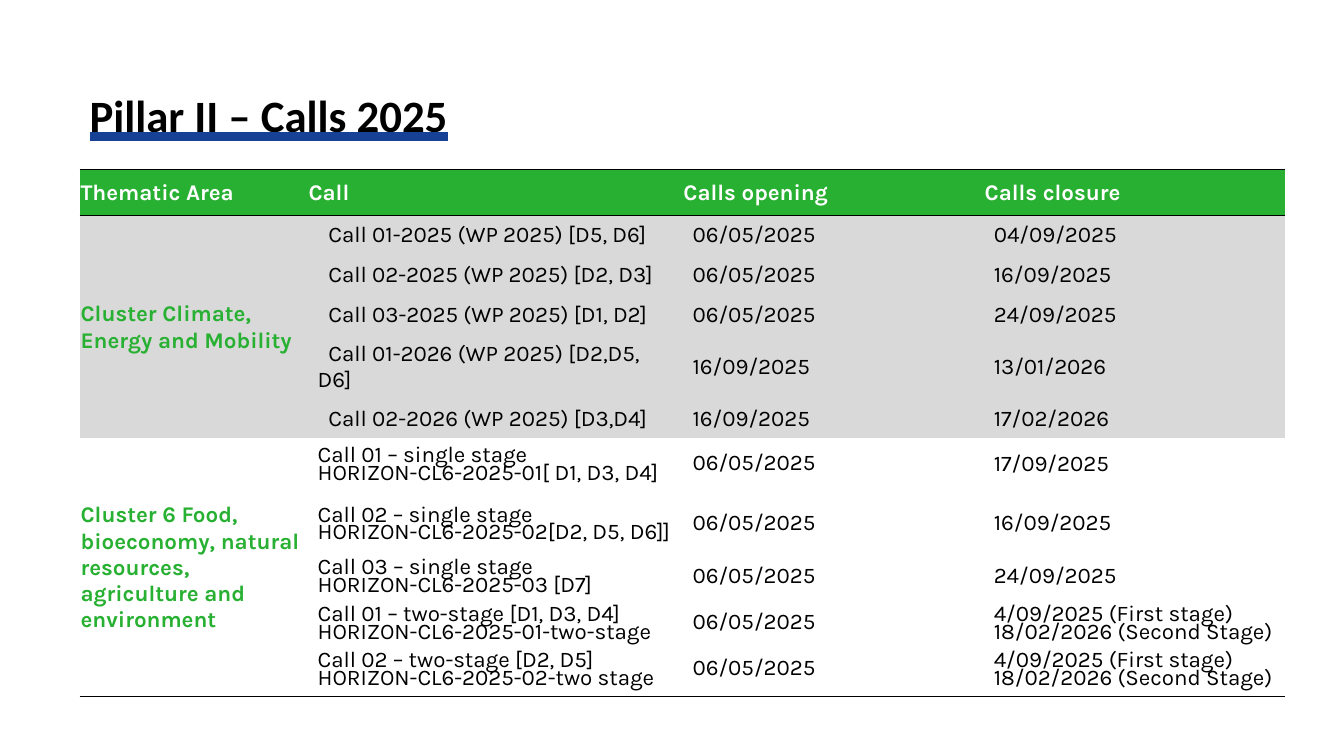
from dataclasses import dataclass

from lxml.etree import SubElement as Sub
from pptx import Presentation
from pptx.dml.color import RGBColor as Rgb
from pptx.enum.text import MSO_ANCHOR as Anchor, MSO_UNDERLINE as Under
from pptx.oxml.ns import qn
from pptx.util import Pt

BLACK, WHITE, GREEN, GREY, BLUE = "000000", "FFFFFF", "28B032", "D9D9D9", "164194"
HEADS = ["Thematic Area", "Call", "Calls opening", "Calls closure"]
COLS = [162.8, 267.8, 215.2, 215.2]
ROWS = [33.1] + [28.4] * 5 + [42.5] * 2 + [33.1] * 3
STAGES = "4/09/2025 (First stage)\n18/02/2026 (Second Stage)"


@dataclass
class Call:
    name: str
    start: str
    end: str


@dataclass
class Area:
    name: str
    fill: str
    indent: float
    leads: tuple  # line pitch of the call, opening and closure columns
    calls: list


AREAS = [
    Area("Cluster Climate, Energy and Mobility", GREY, 7.7, (None, None, None), [
        Call("Call 01-2025 (WP 2025) [D5, D6]", "06/05/2025", "04/09/2025"),
        Call("Call 02-2025 (WP 2025) [D2, D3]", "06/05/2025", "16/09/2025"),
        Call("Call 03-2025 (WP 2025) [D1, D2]", "06/05/2025", "24/09/2025"),
        Call("Call 01-2026 (WP 2025) [D2,D5, D6]", "16/09/2025", "13/01/2026"),
        Call("Call 02-2026 (WP 2025) [D3,D4]", "16/09/2025", "17/02/2026"),
    ]),
    Area("Cluster 6 Food, bioeconomy, natural resources, agriculture and environment",
         WHITE, 0, (12.8, 12, 12.8), [
        Call("Call 01 – single stage\nHORIZON-CL6-2025-01[ D1, D3, D4]", "06/05/2025", "17/09/2025"),
        Call("Call 02 – single stage\nHORIZON-CL6-2025-02[D2, D5, D6]]", "06/05/2025", "16/09/2025"),
        Call("Call 03 – single stage\nHORIZON-CL6-2025-03 [D7]", "06/05/2025", "24/09/2025"),
        Call("Call 01 – two-stage [D1, D3, D4]\nHORIZON-CL6-2025-01-two-stage", "06/05/2025", STAGES),
        Call("Call 02 – two-stage [D2, D5]\nHORIZON-CL6-2025-02-two stage", "06/05/2025", STAGES),
    ]),
]


def rgb(code: str) -> Rgb:
    return Rgb.from_string(code)


def style(para, face: str, size: float, color: str, bold: bool) -> None:
    font = para.font
    font.name, font.size, font.bold = face, Pt(size), bold
    font.color.rgb = rgb(color)


def edge(cell, lines: str) -> None:
    """Rule the named sides (T, B) and clear the others."""
    props = cell._tc.get_or_add_tcPr()
    for side in "LRTB":
        line = Sub(props, qn(f"a:ln{side}"), w=str(Pt(1)))
        if side in lines:
            Sub(Sub(line, qn("a:solidFill")), qn("a:srgbClr"), val=BLACK)
        else:
            Sub(line, qn("a:noFill"))


def fill(cell, text: str, back: str, color: str, bold: bool,
         lead: float | None = None, indent: float = 0) -> None:
    cell.fill.solid()
    cell.fill.fore_color.rgb = rgb(back)
    cell.vertical_anchor = Anchor.MIDDLE
    if bold:
        cell.margin_left = cell.margin_right = cell.margin_top = Pt(0.7)
        cell.margin_bottom = Pt(0)
    cell.text_frame.text = text
    for para in cell.text_frame.paragraphs:
        if lead:
            para.line_spacing = Pt(lead)
        if indent:
            para._p.get_or_add_pPr().set("indent", str(Pt(indent)))
        style(para, "Karla", 16, color, bold)


def title(slide) -> None:
    frame = slide.shapes.add_textbox(Pt(56.9), Pt(47.5), Pt(828), Pt(73.4)).text_frame
    frame.word_wrap = True
    frame.vertical_anchor = Anchor.MIDDLE
    para = frame.paragraphs[0]
    para.line_spacing = 0.9
    run = para.add_run()
    run.text = "Pillar II – Calls 2025"
    style(run, "Calibri", 32, BLACK, True)
    run.font.underline = Under.HEAVY_LINE
    # Blue underline, placed ahead of the typeface
    paint = Sub(run.font._element, qn("a:uFill"))
    Sub(Sub(paint, qn("a:solidFill")), qn("a:srgbClr"), val=BLUE)
    run.font._element.find(qn("a:latin")).addprevious(paint)


def grid(slide) -> None:
    frame = slide.shapes.add_table(len(ROWS), len(COLS), Pt(56.9), Pt(121),
                                   Pt(sum(COLS)), Pt(sum(ROWS)))
    table = frame.table
    for col, width in zip(table.columns, COLS):
        col.width = Pt(width)
    for row, height in zip(table.rows, ROWS):
        row.height = Pt(height)

    # Rules above and below the header, and under the last row
    rules = {0: "TB", 1: "T", len(ROWS) - 1: "B"}
    for y in range(len(ROWS)):
        for x in range(len(COLS)):
            edge(table.cell(y, x), rules.get(y, ""))

    # Header
    for x, head in enumerate(HEADS):
        fill(table.cell(0, x), head, GREEN, WHITE, True)

    # Areas and their calls
    top = 1
    for area in AREAS:
        last = top + len(area.calls) - 1
        first = table.cell(top, 0)
        first.merge(table.cell(last, 0))
        fill(first, area.name, area.fill, GREEN, True)
        if last == len(ROWS) - 1:
            for line in first._tc.tcPr.findall(qn("a:lnB")):
                line.getparent().replace(line, table.cell(last, 0)._tc.tcPr.find(qn("a:lnB")))
        for y, call in enumerate(area.calls, top):
            texts = (call.name, call.start, call.end)
            for x, (text, lead) in enumerate(zip(texts, area.leads), 1):
                fill(table.cell(y, x), text, area.fill, BLACK, False, lead,
                     area.indent if x == 1 else 0)
        top = last + 1


def main() -> None:
    deck = Presentation()
    deck.slide_width, deck.slide_height = Pt(960), Pt(540)
    slide = deck.slides.add_slide(deck.slide_layouts[6])
    title(slide)
    grid(slide)
    deck.save("out.pptx")


if __name__ == "__main__":
    main()
